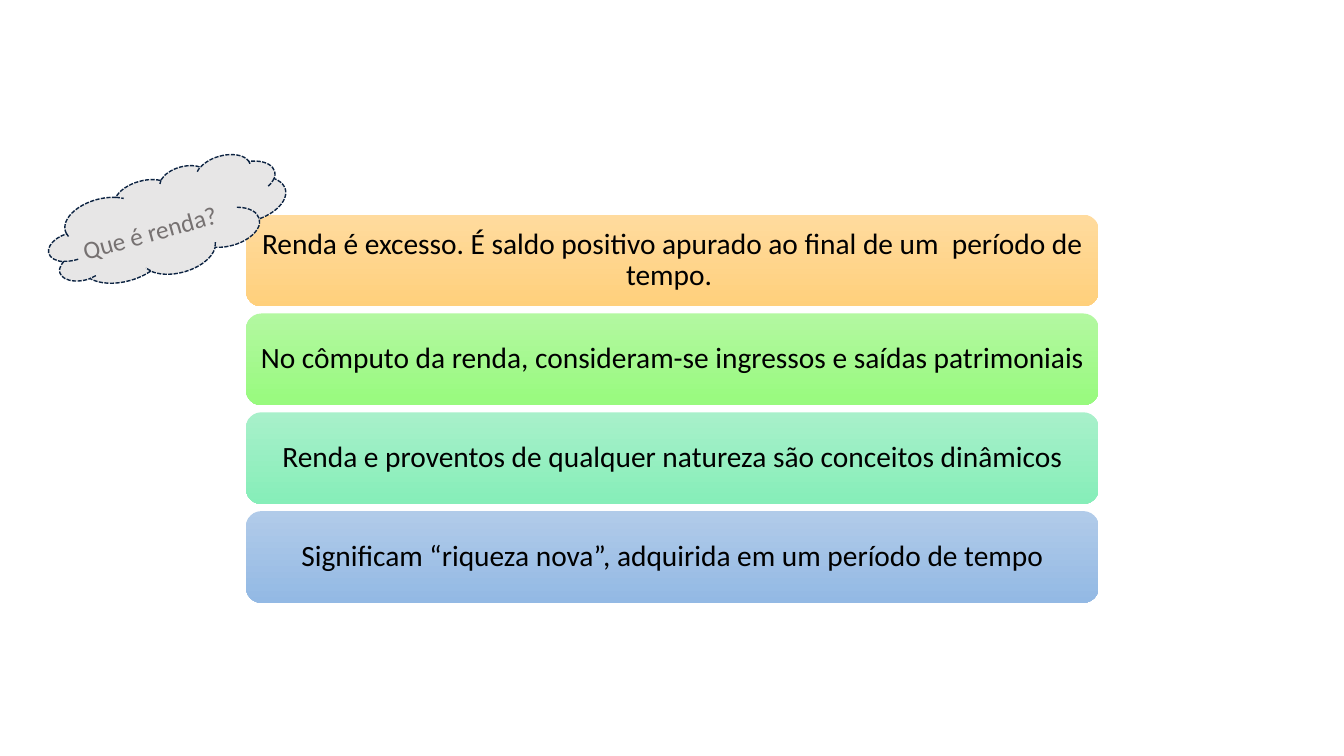
from pptx import Presentation
from pptx import util as u
from pptx.dml.color import RGBColor
from pptx.enum import dml, shapes, text

HUES = {
    "ink": "000000", "grey": "767171", "cloud": "E7E6E6", "edge": "0C2342",
    "amber": ("FFDB9E", "FFD07C"), "green": ("B3F8A1", "98FA7E"),
    "mint": ("A8F0CA", "86EEB9"), "blue": ("B1CBE9", "93B9E4"),
}
BARS = [
    ("amber", "Renda é excesso. É saldo positivo apurado ao final de um  período de tempo. "),
    ("green", "No cômputo da renda, consideram-se ingressos e saídas patrimoniais"),
    ("mint", "Renda e proventos de qualquer natureza são conceitos dinâmicos"),
    ("blue", "Significam “riqueza nova”, adquirida em um período de tempo"),
]


class Deck:
    """Holds the style and the current slide, and draws its elements."""

    font = "Calibri"

    def __init__(self):
        self.prs = Presentation()
        self.prs.slide_width = u.Cm(33.87)
        self.prs.slide_height = u.Cm(19.05)
        self.slide = self.prs.slides.add_slide(self.prs.slide_layouts[6])

    def shape(self, kind, box, words, size, hue, align):
        form = self.slide.shapes.add_shape(kind, *map(u.Cm, box))
        form.shadow.inherit = False
        frame = form.text_frame
        frame.text = words
        frame.word_wrap = True
        frame.vertical_anchor = text.MSO_ANCHOR.MIDDLE
        para = frame.paragraphs[0]
        para.alignment = align
        font = para.runs[0].font
        font.name, font.size = self.font, u.Pt(size)
        font.color.rgb = RGBColor.from_string(HUES[hue])
        return form

    def bar(self, box, words, hue):
        form = self.shape(shapes.MSO_SHAPE.ROUNDED_RECTANGLE, box, words,
                          21, "ink", text.PP_ALIGN.CENTER)
        form.line.fill.background()
        form.fill.gradient()
        form.fill.gradient_angle = 270
        for spot, (stop, shade) in enumerate(zip(form.fill.gradient_stops, HUES[hue])):
            stop.position = spot
            stop.color.rgb = RGBColor.from_string(shade)
        frame = form.text_frame
        frame.margin_left = frame.margin_right = u.Cm(0.22)
        frame.margin_top = frame.margin_bottom = u.Cm(0.22)
        frame.paragraphs[0].line_spacing = 0.9

    def cloud(self, box, words, turn):
        form = self.shape(shapes.MSO_SHAPE.CLOUD, box, words,
                          18, "grey", text.PP_ALIGN.LEFT)
        form.rotation = turn
        form.fill.solid()
        form.fill.fore_color.rgb = RGBColor.from_string(HUES["cloud"])
        form.line.color.rgb = RGBColor.from_string(HUES["edge"])
        form.line.width = u.Pt(1)
        form.line.dash_style = dml.MSO_LINE.SQUARE_DOT
        form.text_frame.margin_left = 0
        form.text_frame.margin_top = u.Cm(0.43)


def main():
    deck = Deck()
    for row, (hue, words) in enumerate(BARS):
        deck.bar((6.2, 5.41 + 2.49 * row, 21.49, 2.31), words, hue)
    deck.cloud((1.14, 4.34, 6.17, 2.57), "Que é renda?", 344.5)
    deck.prs.save("out.pptx")


if __name__ == "__main__":
    main()
